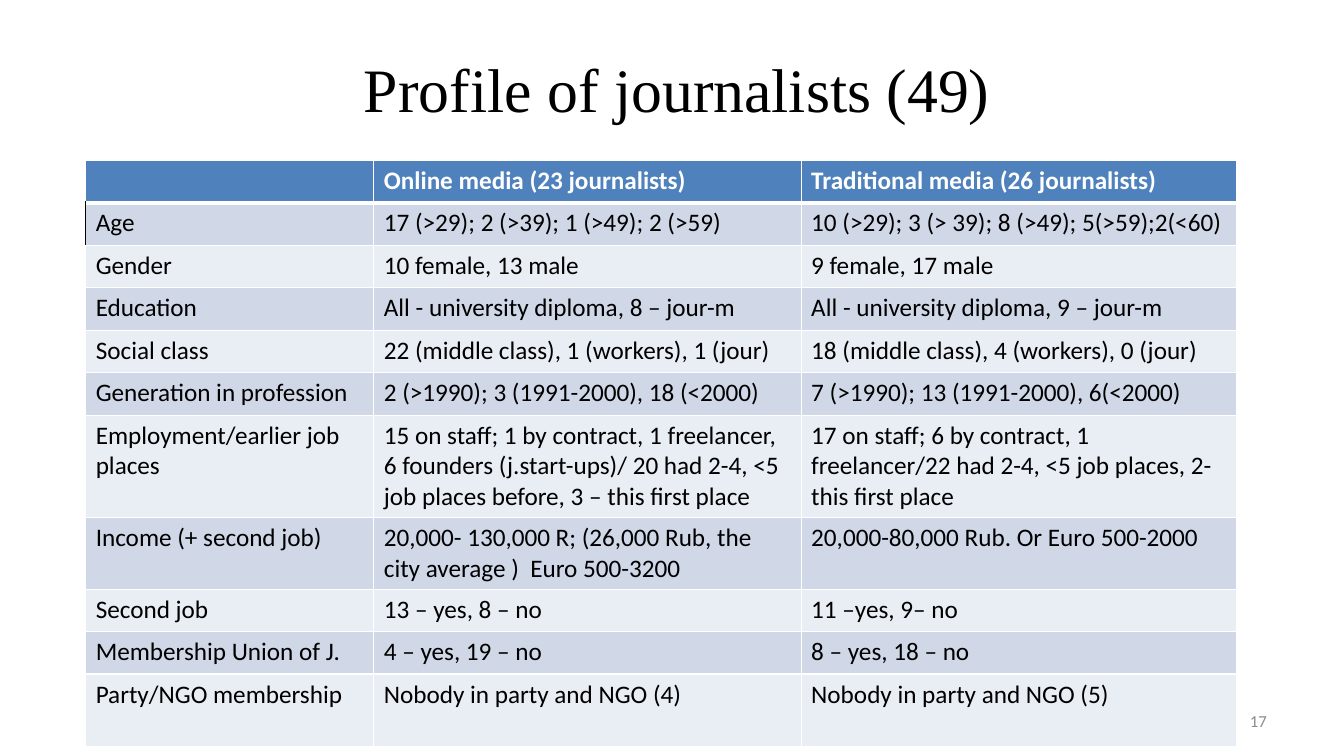
from lxml.etree import SubElement
from pptx import Presentation
from pptx.dml.color import RGBColor
from pptx.enum.text import MSO_ANCHOR, PP_ALIGN
from pptx.oxml.ns import qn
from pptx.util import Cm, Pt

WHITE = RGBColor(0xFF, 0xFF, 0xFF)
BLACK = RGBColor(0x00, 0x00, 0x00)
GREY = RGBColor(0x8C, 0x8C, 0x8C)
HEADER_BLUE = RGBColor(0x4F, 0x81, 0xBD)
BAND_DARK = RGBColor(0xD0, 0xD8, 0xE8)
BAND_LIGHT = RGBColor(0xE9, 0xED, 0xF4)

COL_WIDTHS = [7.26, 10.77, 10.97]
ROW_HEIGHT, TALL_ROW_HEIGHT = 1.07, 1.83
TALL_ROWS = (6, 10)

PROFILE = [
    ("", "Online media (23 journalists)", "Traditional media (26 journalists)"),
    ("Age", "17 (>29); 2 (>39); 1 (>49); 2 (>59)",
     "10 (>29); 3 (> 39); 8 (>49); 5(>59);2(<60)"),
    ("Gender", "10 female, 13 male", "9 female, 17 male"),
    ("Education", "All - university diploma, 8 – jour-m",
     "All - university diploma, 9 – jour-m"),
    ("Social class", "22 (middle class), 1 (workers), 1 (jour)",
     "18 (middle class), 4 (workers), 0 (jour)"),
    ("Generation in profession", "2 (>1990); 3 (1991-2000), 18 (<2000)",
     "7 (>1990); 13 (1991-2000), 6(<2000)"),
    ("Employment/earlier job places",
     "15 on staff; 1 by contract, 1 freelancer, 6 founders (j.start-ups)/ "
     "20 had 2-4, <5 job places before, 3 – this first place",
     "17 on staff; 6 by contract, 1 freelancer/22 had 2-4, <5 job places, "
     "2- this first place"),
    ("Income (+ second job)",
     "20,000- 130,000 R; (26,000 Rub, the city average )  Euro 500-3200",
     "20,000-80,000 Rub. Or Euro 500-2000"),
    ("Second job", "13 – yes, 8 – no", "11 –yes, 9– no"),
    ("Membership Union of J.", "4 – yes, 19 – no", "8 – yes, 18 – no"),
    ("Party/NGO membership", "Nobody in party and NGO (4)",
     "Nobody in party and NGO (5)"),
]


def add_run(p, text, font, size, color, bold=False):
    r = p.add_run()
    r.text = text
    r.font.name = font
    r.font.size = Pt(size)
    r.font.bold = bold
    r.font.color.rgb = color


def set_border(cell, side, color, width):
    ln = SubElement(cell._tc.get_or_add_tcPr(), qn(f"a:ln{side}"),
                    w=str(Pt(width)))
    fill = SubElement(ln, qn("a:solidFill"))
    SubElement(fill, qn("a:srgbClr"), val=str(color))


def add_text(s, box, text, font, size, color, align):
    tb = s.shapes.add_textbox(*(Cm(v) for v in box))
    tf = tb.text_frame
    tf.word_wrap = True
    tf.vertical_anchor = MSO_ANCHOR.MIDDLE
    p = tf.paragraphs[0]
    p.alignment = align
    add_run(p, text, font, size, color)


def style_cell(cell, row, col, text):
    # Borders: thick line under the header, black left edge beside "Age"
    set_border(cell, "L", BLACK if (row, col) == (1, 0) else WHITE, 1)
    set_border(cell, "R", WHITE, 1)
    set_border(cell, "T", WHITE, 3 if row == 1 else 1)
    set_border(cell, "B", WHITE, 3 if row == 0 else 1)

    # Banded fill
    cell.fill.solid()
    if row == 0:
        cell.fill.fore_color.rgb = HEADER_BLUE
    else:
        cell.fill.fore_color.rgb = BAND_DARK if row % 2 else BAND_LIGHT

    p = cell.text_frame.paragraphs[0]
    if text:
        add_run(p, text, "Calibri", 18, BLACK if row else WHITE, row == 0)
    else:
        p.font.size = Pt(18)


def add_profile_table(s, left, top):
    heights = [TALL_ROW_HEIGHT if i in TALL_ROWS else ROW_HEIGHT
               for i in range(len(PROFILE))]
    table = s.shapes.add_table(len(PROFILE), len(COL_WIDTHS), Cm(left), Cm(top),
                               Cm(sum(COL_WIDTHS)), Cm(sum(heights))).table
    for column, width in zip(table.columns, COL_WIDTHS):
        column.width = Cm(width)
    for i, (height, texts) in enumerate(zip(heights, PROFILE)):
        table.rows[i].height = Cm(height)
        for j, text in enumerate(texts):
            style_cell(table.cell(i, j), i, j, text)


def main():
    prs = Presentation()
    prs.slide_width, prs.slide_height = Cm(33.87), Cm(19.05)
    s = prs.slides.add_slide(prs.slide_layouts[6])

    # Profile table
    add_profile_table(s, 2.16, 4.04)
    # Title
    add_text(s, (1.98, 0.81, 30.18, 2.82), "Profile of journalists (49)",
             "Times New Roman", 44.1, BLACK, PP_ALIGN.CENTER)
    # Slide number
    add_text(s, (24.28, 17.65, 7.9, 1.02), "17", "Calibri", 12, GREY,
             PP_ALIGN.RIGHT)

    prs.save("out.pptx")


if __name__ == "__main__":
    main()
